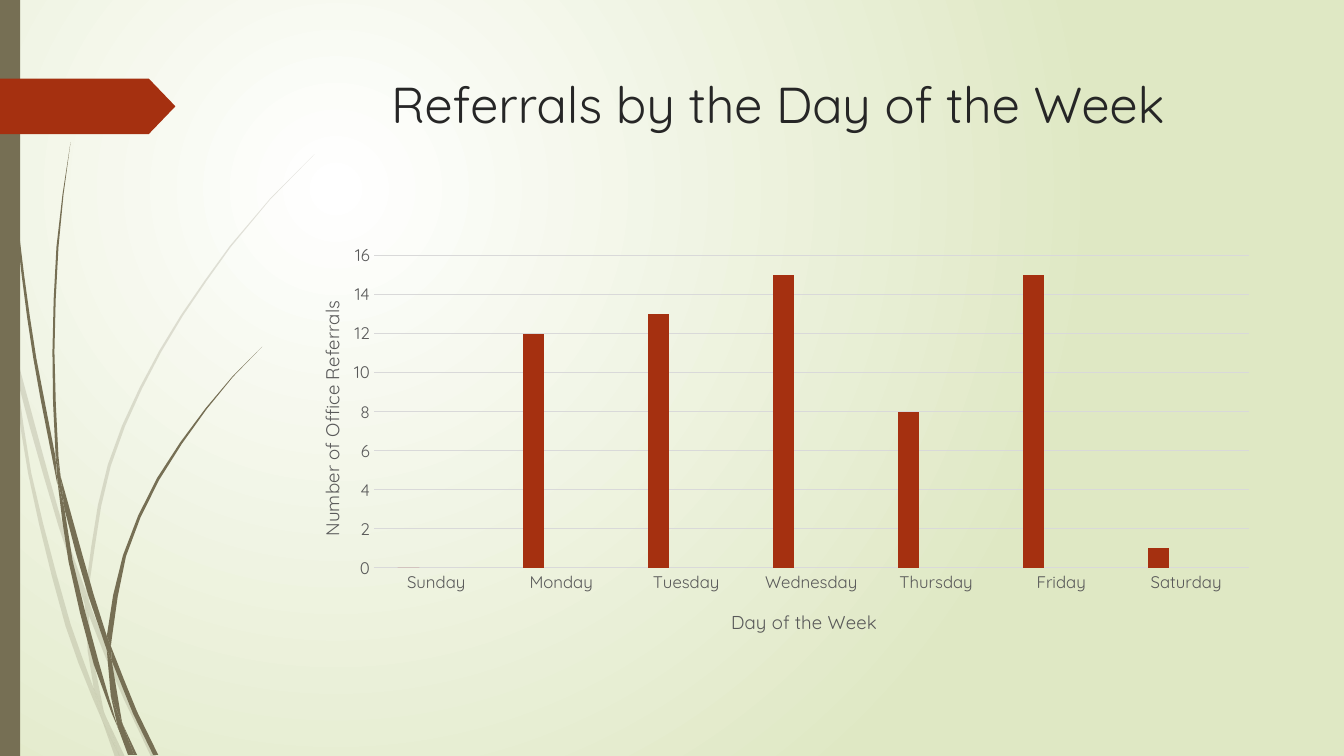
import math

import pptx
import pptx.chart.data
import pptx.dml.color
import pptx.enum.chart
import pptx.enum.shapes
import pptx.enum.text
import pptx.oxml
import pptx.oxml.ns
import pptx.util

PX = 9144  # EMU per px, 100 px to the inch
FONT = "Quicksand"
OLIVE, RUST, ORANGE, TAN = "766F54", "A53010", "DE7E18", "9F8351"
INK, GREY, RULE = "262626", "595959", "D9D9D9"
PIECE = 45  # px of curve per straight piece

# Each blade is a pair of edges that share their ends
PALE_BLADES = [
    ([(11, 350), (9, 322), (0, 282)], [(11, 350), (10, 344), (0, 299)]),
    ([(14, 345), (62, 520), (85, 586)], [(14, 345), (17, 376), (58, 522), (84, 599)]),
    ([(88, 596), (92, 607), (127, 692), (155, 751)],
     [(88, 596), (88, 610), (123, 694), (150, 751)]),
    ([(105, 711), (124, 751)], [(105, 711), (119, 751)]),
    ([(11, 350), (17, 376), (31, 469), (70, 619), (93, 683), (101, 714)],
     [(11, 350), (28, 470), (65, 621), (92, 693), (101, 714)]),
    ([(84, 599), (87, 646), (93, 683), (105, 711)],
     [(84, 599), (88, 610), (91, 646), (103, 706), (105, 711)]),
    ([(312, 153), (268, 197), (228, 244), (158, 348), (107, 461), (85, 584), (88, 596)],
     [(312, 154), (268, 198), (229, 245), (160, 349), (110, 462), (88, 584), (88, 596)]),
    ([(101, 714), (114, 751)], [(101, 714), (119, 751)]),
    ([(88, 610), (88, 596), (85, 586)], [(88, 610), (84, 599), (85, 586)]),
    ([(93, 683), (101, 714), (119, 751)], [(93, 683), (105, 711), (119, 751)]),
]
DARK_BLADES = [
    ([(3, 0), (7, 110), (17, 233), (33, 355), (57, 481)],
     [(4, 0), (8, 109), (19, 232), (36, 355), (55, 453), (57, 481)]),
    ([(60, 472), (64, 505), (88, 592), (106, 645)],
     [(60, 472), (93, 590), (106, 631), (106, 645)]),
    ([(110, 641), (136, 706), (157, 749)],
     [(110, 641), (111, 656), (132, 708), (152, 749)]),
    ([(57, 477), (64, 505), (72, 556), (98, 657), (117, 722)],
     [(57, 477), (68, 557), (93, 659), (111, 708), (117, 722)]),
    ([(70, 141), (63, 193), (58, 245), (54, 349), (58, 453), (60, 472)],
     [(70, 141), (62, 193), (56, 245), (52, 349), (55, 449), (60, 472)]),
    ([(122, 719), (136, 749)], [(122, 719), (133, 749)]),
    ([(55, 449), (60, 472), (64, 505)], [(55, 449), (57, 477), (64, 505)]),
    ([(260, 344), (231, 373), (204, 405), (156, 474), (122, 551), (106, 631), (110, 641)],
     [(261, 344), (231, 374), (205, 406), (158, 476), (125, 552), (111, 633), (110, 641)]),
    ([(117, 722), (127, 749)], [(117, 722), (131, 749)]),
    ([(106, 645), (110, 691), (122, 719)],
     [(106, 645), (111, 656), (121, 716), (122, 719)]),
    ([(106, 631), (106, 645), (111, 656)], [(106, 631), (110, 641), (111, 656)]),
    ([(110, 691), (117, 722), (130, 749)], [(110, 691), (122, 719), (133, 749)]),
]


def px(*lengths):
    return [round(v * PX) for v in lengths]


def rgb(color):
    return pptx.dml.color.RGBColor.from_string(color)


def xml(tag, body="", **attrs):
    text = "".join(f' {k}="{v}"' for k, v in attrs.items())
    ns = pptx.oxml.ns.nsdecls("a", "c")
    return pptx.oxml.parse_xml(f"<{tag} {ns}{text}>{body}</{tag}>")


def paint(sp, color, opacity=100):
    sp.shadow.inherit = False
    sp.fill.solid()
    sp.fill.fore_color.rgb = rgb(color)
    sp.line.fill.background()
    if opacity < 100:
        clr = sp.element.spPr.find(".//" + pptx.oxml.ns.qn("a:srgbClr"))
        clr.append(xml("a:alpha", val=opacity * 1000))


def set_font(font, size, color):
    font.name, font.size, font.bold = FONT, pptx.util.Pt(size), False
    font.color.rgb = rgb(color)


def smooth_edge(knots):
    """Points of a smooth curve through the knots."""
    def heading(i):
        (x0, y0), (x1, y1) = knots[max(i - 1, 0)], knots[min(i + 1, len(knots) - 1)]
        d = math.hypot(x1 - x0, y1 - y0)
        return (x1 - x0) / d, (y1 - y0) / d

    pts = [knots[0]]
    for i, (a, b) in enumerate(zip(knots, knots[1:])):
        span, ha, hb = math.dist(a, b), heading(i), heading(i + 1)
        steps = max(1, round(span / PIECE))
        for n in range(1, steps + 1):
            t = n / steps
            w = 3 * t * t - 2 * t ** 3
            wa, wb = t * (1 - t) ** 2 * span, t * t * (t - 1) * span
            pts.append(tuple(a[k] * (1 - w) + b[k] * w + ha[k] * wa + hb[k] * wb
                             for k in (0, 1)))
    return pts


def add_blade(s, edges, opacity):
    there, back = map(smooth_edge, edges)
    if there[-1] == back[-1]:
        back.pop()
    pts = [px(*pt) for pt in there + back[:0:-1]]
    fb = s.shapes.build_freeform(*pts[0])
    fb.add_line_segments(pts[1:], close=True)
    paint(fb.convert_to_shape(), OLIVE, opacity)


def add_background(s):
    fill = s.background.fill
    fill.gradient()
    for stop, color in zip(fill.gradient_stops, ("FFFFFF", "DFE8C4")):
        stop.color.rgb = rgb(color)
    lin = s.element.find(".//" + pptx.oxml.ns.qn("a:lin"))
    focus = '<a:fillToRect l="50000" t="50000" r="100000" b="100000"/>'
    lin.getparent().replace(lin, xml("a:path", focus, path="circle"))


def add_block(s, kind, box, color):
    sp = s.shapes.add_shape(kind, *px(*box))
    paint(sp, color)
    return sp


def add_title(s, text, box):
    tf = s.shapes.add_textbox(*px(*box)).text_frame
    tf.word_wrap = True
    tf.text = text
    p = tf.paragraphs[0]
    p.alignment = pptx.enum.text.PP_ALIGN.CENTER
    set_font(p.runs[0].font, 36, INK)


def manual_layout(x, y, w=None, h=None):
    inner = '<c:layoutTarget val="inner"/>' if w else ""
    body = inner + '<c:xMode val="edge"/><c:yMode val="edge"/>'
    for name, v in zip("xywh", (x, y, w, h)):
        body += f'<c:{name} val="{v}"/>' if v is not None else ""
    return xml("c:layout", f"<c:manualLayout>{body}</c:manualLayout>")


def drop_layout(el):
    for old in el.findall(pptx.oxml.ns.qn("c:layout")):
        el.remove(old)


def format_axis(axis, title, x, y):
    axis.major_tick_mark = axis.minor_tick_mark = pptx.enum.chart.XL_TICK_MARK.NONE
    set_font(axis.tick_labels.font, 12, GREY)
    tf = axis.axis_title.text_frame
    tf.text = title
    set_font(tf.paragraphs[0].runs[0].font, 13.3, GREY)
    el = axis.axis_title.element
    drop_layout(el)
    el.find(pptx.oxml.ns.qn("c:tx")).addnext(manual_layout(x, y))


def add_referral_chart(s, box):
    cd = pptx.chart.data.CategoryChartData()
    cd.categories = ["Sunday", "Monday", "Tuesday", "Wednesday",
                     "Thursday", "Friday", "Saturday"]
    cd.add_series("Series 1", (0, 12, 13, 15, 8, 15, 1))
    for name in ("Series 2", "Series 3"):
        cd.add_series(name, [None] * 7)
    kind = pptx.enum.chart.XL_CHART_TYPE.COLUMN_CLUSTERED
    chart = s.shapes.add_chart(kind, *px(*box), cd).chart
    chart.has_legend = chart.has_title = False
    set_font(chart.font, 10, "000000")
    plot = chart.plots[0]
    plot.gap_width, plot.overlap, plot.vary_by_categories = 219, -27, False
    for ser, color in zip(plot.series, (RUST, ORANGE, TAN)):
        ser.format.fill.solid()
        ser.format.fill.fore_color.rgb = rgb(color)
    # Axes
    cat, val = chart.category_axis, chart.value_axis
    format_axis(cat, "Day of the Week", 0.45, 0.89)
    format_axis(val, "Number of Office Referrals", 0.03, 0.15)
    val.minimum_scale, val.maximum_scale, val.major_unit = 0, 16, 2
    val.format.line.fill.background()
    for line in (cat.format.line, val.major_gridlines.format.line):
        line.color.rgb, line.width = rgb(RULE), pptx.util.Pt(0.75)
    # Plot area position
    area = chart.element.find(".//" + pptx.oxml.ns.qn("c:plotArea"))
    drop_layout(area)
    area.insert(0, manual_layout(0.09, 0.05, 0.89, 0.75))


def main():
    prs = pptx.Presentation()
    prs.slide_width, prs.slide_height = px(1333, 750)
    s = prs.slides.add_slide(prs.slide_layouts[6])
    add_background(s)
    # Grass blades
    for blades, opacity in ((PALE_BLADES, 20), (DARK_BLADES, 100)):
        for edges in blades:
            add_blade(s, edges, opacity)
    # Side bar and tag
    shapes = pptx.enum.shapes.MSO_SHAPE
    add_block(s, shapes.RECTANGLE, (0, 0, 20, 750), OLIVE)
    tag = add_block(s, shapes.PENTAGON, (0, 78, 174, 55), RUST)
    tag.adjustments[0] = 0.48
    # Content
    add_title(s, "Referrals by the Day of the Week", (284, 68, 975, 140))
    add_referral_chart(s, (283, 233, 975, 413))
    prs.save("out.pptx")


if __name__ == "__main__":
    main()
